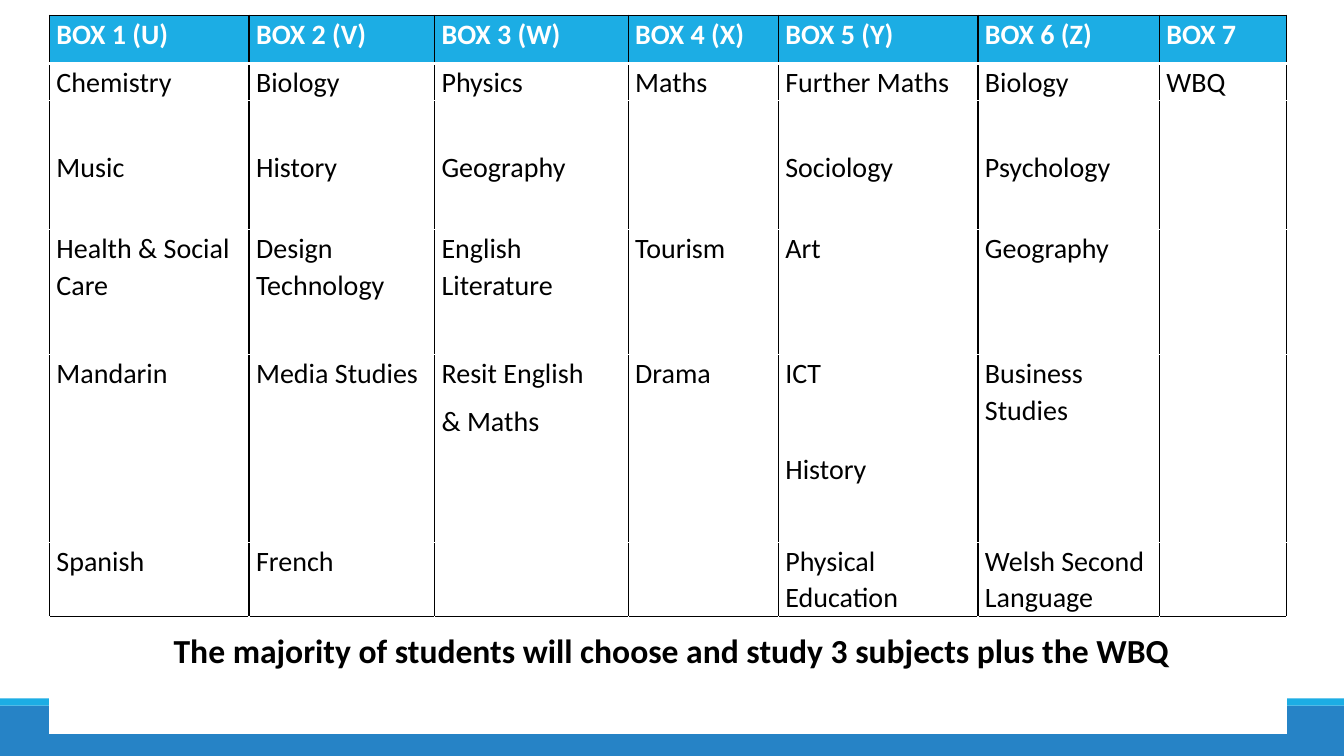
from pptx import Presentation
from pptx.dml.color import RGBColor
from pptx.enum.shapes import MSO_SHAPE
from pptx.enum.text import MSO_ANCHOR, MSO_AUTO_SIZE, PP_ALIGN
from pptx.oxml.ns import qn
from pptx.util import Inches, Pt
from lxml.etree import SubElement

COLORS = {"white": "FFFFFF", "black": "000000", "sky": "1CADE4", "blue": "2683C6"}
FONT = "Calibri"
WIDTHS = [1.98, 1.84, 1.92, 1.49, 1.98, 1.8, 1.26]
HEIGHTS = [0.48, 0.37, 1.28, 1.24, 1.86, 0.74, 0.29, 0.35, 0.52]
HEAD, MUSIC, LAST = 0, 2, 5  # header, lowered row, last row with subjects
GAP = 0.47  # one skipped line

ROWS = [
    ["BOX 1 (U)", "BOX 2 (V)", "BOX 3 (W)", "BOX 4 (X)", "BOX 5 (Y)", "BOX 6 (Z)", "BOX 7"],
    ["Chemistry", "Biology", "Physics", "Maths", "Further Maths", "Biology", "WBQ"],
    ["Music", "History", "Geography", "", "Sociology", "Psychology", ""],
    ["Health & Social Care", "Design Technology", "English Literature", "Tourism",
     "Art", "Geography", ""],
    ["Mandarin", "Media Studies", "Resit English\n& Maths", "Drama", "ICT\nHistory",
     "Business Studies", ""],
    ["Spanish", "French", "", "", "Physical Education", "Welsh Second Language", ""],
]
NOTE = "The majority of students will choose and study 3 subjects plus the WBQ"


def rgb(name):
    return RGBColor.from_string(COLORS[name])


def style(run, size, color, bold):
    font = run.font
    font.name, font.size, font.bold = FONT, Pt(size), bold
    font.color.rgb = rgb(color)


def add_bar(slide, top, height, color):
    bar = slide.shapes.add_shape(
        MSO_SHAPE.RECTANGLE, 0, Inches(top), Inches(13.33), Inches(height))
    bar.shadow.inherit = False
    bar.fill.solid()
    bar.fill.fore_color.rgb = rgb(color)
    bar.line.fill.background()


def add_edge(cell, tag, color, width):
    line = SubElement(cell._tc.get_or_add_tcPr(), qn("a:" + tag), w=str(Pt(width)))
    fill = SubElement(line, qn("a:solidFill"))
    SubElement(fill, qn("a:srgbClr"), val=COLORS[color])


def add_edges(cell, row):
    side = "black" if row <= LAST else "white"
    top = "black" if row in (HEAD, LAST + 1) else "white"
    base = "black" if row == LAST else "white"
    add_edge(cell, "lnL", side, 1)
    add_edge(cell, "lnR", side, 1)
    add_edge(cell, "lnT", top, 3 if row == HEAD + 1 else 1)
    add_edge(cell, "lnB", base, 3 if row == HEAD else 1)


def fill_cell(cell, row, text):
    head = row == HEAD
    # Borders come before the fill in the cell's XML
    add_edges(cell, row)
    cell.fill.solid()
    cell.fill.fore_color.rgb = rgb("sky" if head else "white")
    cell.margin_left = cell.margin_right = Inches(0.07)
    cell.margin_top = Inches(GAP if row == MUSIC else 0)
    cell.margin_bottom = 0
    cell.text_frame.text = text
    for para in cell.text_frame.paragraphs:
        para.line_spacing = 1.07
        para.space_after = Pt(8)
        if para.text == "History" and row != MUSIC:
            para.space_before = Inches(GAP)
        for run in para.runs:
            style(run, 20, "white" if head else "black", head)
        if not text:
            SubElement(para._p, qn("a:endParaRPr"), sz="1000")


def add_grid(slide):
    frame = slide.shapes.add_table(
        len(HEIGHTS), len(WIDTHS), Inches(0.49), Inches(0.15),
        Inches(sum(WIDTHS)), Inches(sum(HEIGHTS)))
    table = frame.table
    table.horz_banding = False
    for col, width in zip(table.columns, WIDTHS):
        col.width = Inches(width)
    for i, height in enumerate(HEIGHTS):
        table.rows[i].height = Inches(height)
        texts = ROWS[i] if i < len(ROWS) else [""] * len(WIDTHS)
        for j, text in enumerate(texts):
            fill_cell(table.cell(i, j), i, text)


def add_note(slide):
    title = slide.shapes.title
    title.left, title.top = Inches(0.58), Inches(6.2)
    title.width, title.height = Inches(12.16), Inches(0.5)
    # Lift the title above the table's white rows
    title.element.getparent().append(title.element)
    frame = title.text_frame
    frame.text = NOTE
    frame.word_wrap = True
    frame.auto_size = MSO_AUTO_SIZE.NONE
    frame.vertical_anchor = MSO_ANCHOR.TOP
    para = frame.paragraphs[0]
    para.alignment = PP_ALIGN.CENTER
    style(para.runs[0], 24, "black", True)


def main():
    deck = Presentation()
    deck.slide_width, deck.slide_height = Inches(13.33), Inches(7.5)
    slide = deck.slides.add_slide(deck.slide_layouts[5])
    # Footer bars
    add_bar(slide, 7, 0.5, "blue")
    add_bar(slide, 6.93, 0.07, "sky")
    # Option boxes
    add_grid(slide)
    # Closing message
    add_note(slide)
    deck.save("out.pptx")


if __name__ == "__main__":
    main()
